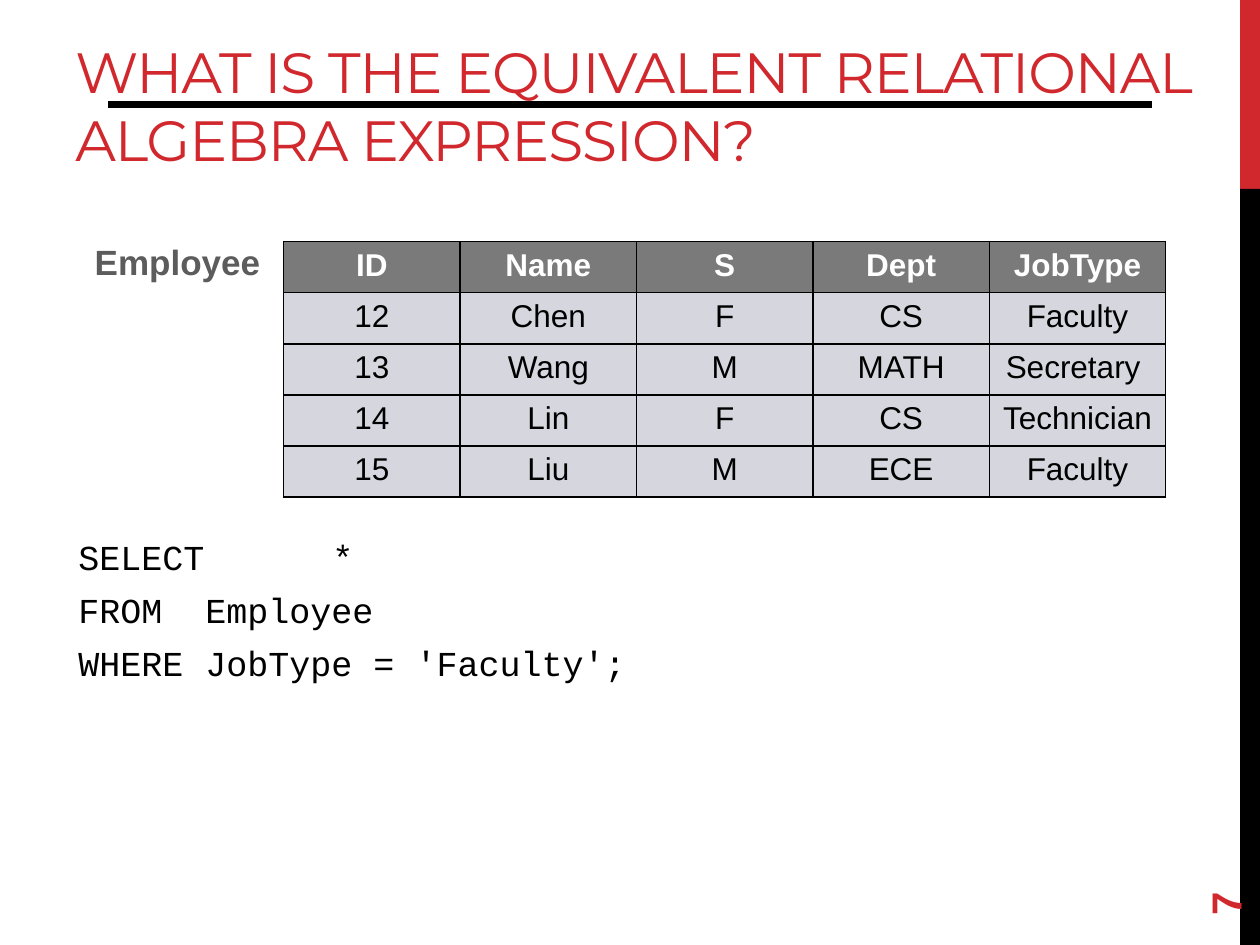
from lxml import etree
from pptx import Presentation
from pptx.dml.color import RGBColor
from pptx.enum.shapes import MSO_CONNECTOR, MSO_SHAPE
from pptx.enum.text import MSO_ANCHOR, PP_ALIGN
from pptx.oxml.ns import qn
from pptx.util import Cm, Pt

RECT = MSO_SHAPE.RECTANGLE
LINE = MSO_CONNECTOR.STRAIGHT
TOP, MIDDLE, BOTTOM = MSO_ANCHOR.TOP, MSO_ANCHOR.MIDDLE, MSO_ANCHOR.BOTTOM
CENTER = PP_ALIGN.CENTER
RED, BLACK, WHITE = "D1282E", "000000", "FFFFFF"
GRAY, DARK, PALE = "5C5C5C", "7A7A7A", "D6D7DE"


def paint(fill, color):
    fill.solid()
    fill.fore_color.rgb = RGBColor.from_string(color)


def write(para, text, face, size, color, bold=False):
    run = para.add_run()
    run.text = text
    run.font.name = face
    run.font.size = Pt(size)
    run.font.bold = bold
    paint(run.font.fill, color)
    return run


deck = Presentation()
deck.slide_width, deck.slide_height = Cm(25.4), Cm(19.05)
slide = deck.slides.add_slide(deck.slide_layouts[6])
shapes = slide.shapes

# Side bar and title rule
for top, height, color in [(0, 3.81, RED), (3.81, 15.24, BLACK)]:
    bar = shapes.add_shape(RECT, Cm(25), Cm(top), Cm(0.4), Cm(height))
    bar.shadow.inherit = False
    paint(bar.fill, color)
    bar.line.fill.background()

rule = shapes.add_connector(LINE, Cm(2.18), Cm(2.11), Cm(23.22), Cm(2.11))
paint(rule.line.fill, BLACK)
rule.line.width = Pt(4)
etree.SubElement(rule._element.spPr, qn("a:effectLst"))

# Title, table label and page number
labels = [
    ("WHAT IS THE EQUIVALENT RELATIONAL ALGEBRA EXPRESSION?",
     1.27, 1.07, 23.7, 2.54, BOTTOM, 0, "Montserrat", 32.4, RED, False),
    ("Employee", 1.66, 4.72, 4, 1.1, TOP, 0, "Arial", 20, GRAY, True),
    ("7", 22.86, 16.36, 3.66, 1.02, MIDDLE, 270, "Arial", 24, RED, True),
]
for text, left, top, width, height, anchor, turn, face, size, color, bold in labels:
    box = shapes.add_textbox(Cm(left), Cm(top), Cm(width), Cm(height))
    box.rotation = turn
    frame = box.text_frame
    frame.word_wrap = True
    frame.vertical_anchor = anchor
    run = write(frame.paragraphs[0], text, face, size, color, bold)
    if face == "Montserrat":
        run.font._element.set("spc", "-60")

# Query, each clause with its own tab stop
box = shapes.add_textbox(Cm(1.58), Cm(10.67), Cm(21), Cm(4))
frame = box.text_frame
frame.word_wrap = True
frame.margin_left = 0
query = [
    ("SELECT\t*", 5.12),
    ("FROM\tEmployee", 2.56),
    ("WHERE\tJobType = 'Faculty';", 2.56),
]
for i, (text, stop) in enumerate(query):
    para = frame.paragraphs[0] if i == 0 else frame.add_paragraph()
    para.space_after = Pt(6.2)
    tabs = etree.SubElement(para._p.get_or_add_pPr(), qn("a:tabLst"))
    etree.SubElement(tabs, qn("a:tab"), pos=str(Cm(stop)), algn="l")
    write(para, text, "Courier New", 20, BLACK)

# Employee table
rows = [
    ("ID", "Name", "S", "Dept", "JobType"),
    ("12", "Chen", "F", "CS", "Faculty"),
    ("13", "Wang", "M", "MATH", "Secretary "),
    ("14", "Lin", "F", "CS", "Technician"),
    ("15", "Liu", "M", "ECE", "Faculty"),
]
grid = shapes.add_table(len(rows), len(rows[0]),
                        Cm(5.72), Cm(4.87), Cm(17.78), Cm(5.15)).table
for r, row in enumerate(rows):
    for c, text in enumerate(row):
        cell = grid.cell(r, c)
        head = r == 0
        para = cell.text_frame.paragraphs[0]
        para.alignment = CENTER
        write(para, text, "Arial", 18, WHITE if head else BLACK, head)
        props = cell._tc.get_or_add_tcPr()
        for side in ("a:lnL", "a:lnR", "a:lnT", "a:lnB"):
            edge = etree.SubElement(props, qn(side), w=str(Pt(1)))
            fill = etree.SubElement(edge, qn("a:solidFill"))
            etree.SubElement(fill, qn("a:srgbClr"), val=BLACK)
        paint(cell.fill, DARK if head else PALE)

deck.save("out.pptx")
